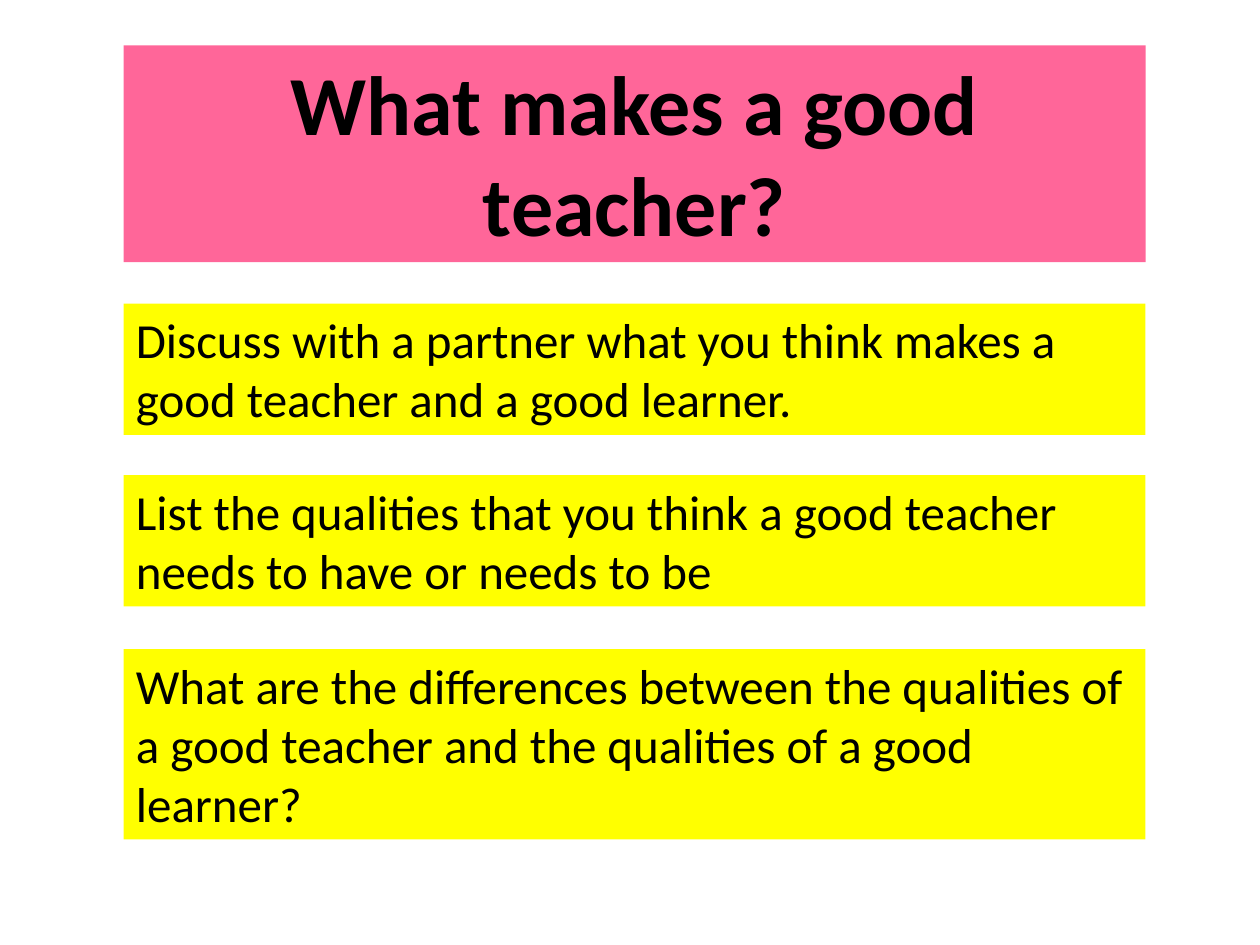
import pptx
import pptx.util
import pptx.dml.color
import pptx.enum.text

Pt = pptx.util.Pt

# Content: prompts as (text, top, height)
TITLE = "What makes a good teacher?"
PROMPTS = [
    ("Discuss with a partner what you think makes a good teacher and a good learner.", 173.5, 75),
    ("List the qualities that you think a good teacher needs to have or needs to be", 271.5, 75),
    ("What are the differences between the qualities of a good teacher "
     "and the qualities of a good learner?", 371, 108.7),
]
COLOURS = {"title": "FF6699", "prompt": "FFFF00", "text": "000000"}
FONT = "Calibri"
LEFT, WIDTH = 70.6, 584
TITLE_TOP, TITLE_HEIGHT = 26, 123.8


def colour(name):
    return pptx.dml.color.RGBColor.from_string(COLOURS[name])


def fill_box(box, text, top, height, fill, size, align, bold=False):
    box.left, box.top, box.width, box.height = Pt(LEFT), Pt(top), Pt(WIDTH), Pt(height)
    box.fill.solid()
    box.fill.fore_color.rgb = colour(fill)
    frame = box.text_frame
    frame.word_wrap = True
    frame.auto_size = pptx.enum.text.MSO_AUTO_SIZE.SHAPE_TO_FIT_TEXT
    frame.vertical_anchor = pptx.enum.text.MSO_ANCHOR.TOP
    para = frame.paragraphs[0]
    para.alignment = align
    span = para.add_run()
    span.text = text
    span.font.name = FONT
    span.font.size = Pt(size)
    span.font.bold = bold
    span.font.color.rgb = colour("text")


def main():
    deck = pptx.Presentation()
    deck.slide_width, deck.slide_height = Pt(720), Pt(540)
    page = deck.slides.add_slide(deck.slide_layouts[5])
    align = pptx.enum.text.PP_ALIGN

    # Title banner
    fill_box(page.shapes.title, TITLE, TITLE_TOP, TITLE_HEIGHT, "title", 48, align.CENTER, bold=True)

    # Discussion prompts
    for text, top, height in PROMPTS:
        box = page.shapes.add_textbox(Pt(LEFT), Pt(top), Pt(WIDTH), Pt(height))
        fill_box(box, text, top, height, "prompt", 28, align.LEFT)

    deck.save("out.pptx")


if __name__ == "__main__":
    main()
